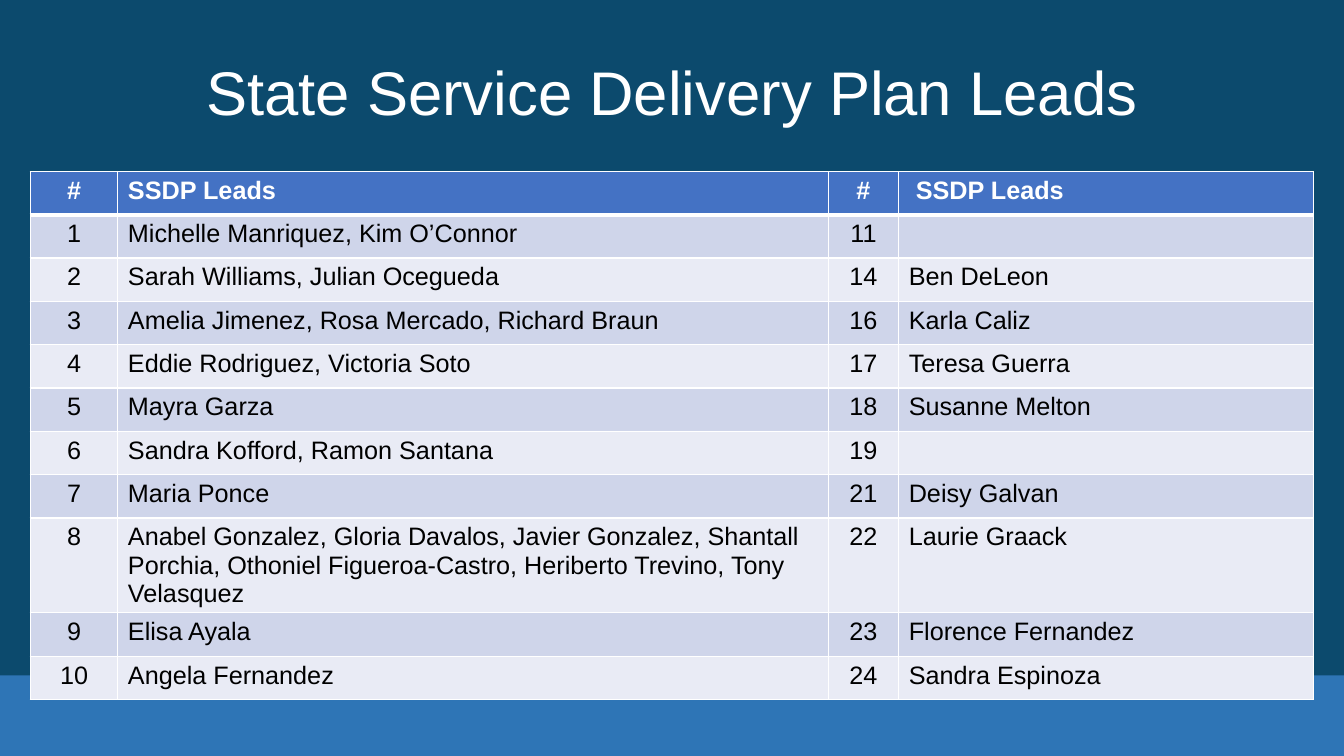
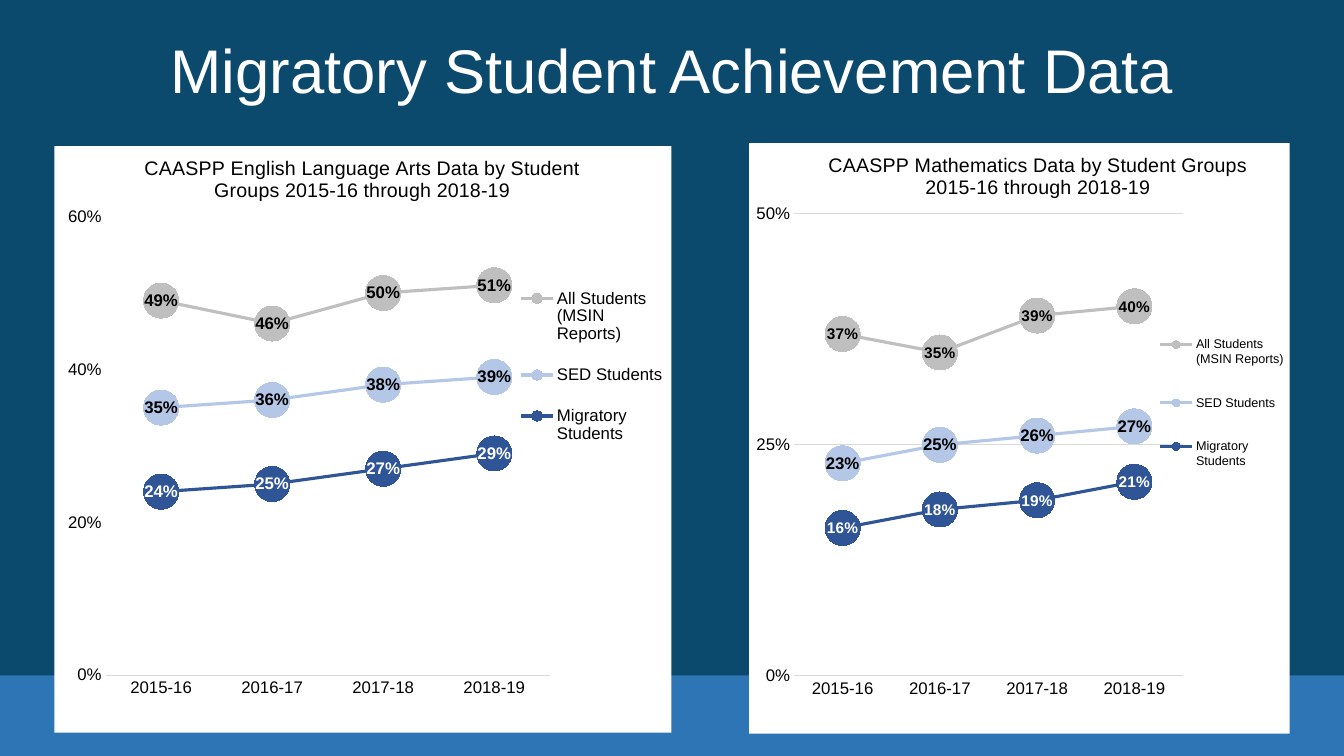
"""Build a table slide and a two-chart slide on student service plans."""
from dataclasses import dataclass
from itertools import zip_longest

from lxml import etree
from pptx import Presentation
from pptx import util as u
from pptx.chart.chart import Chart
from pptx.chart.data import CategoryChartData
from pptx.dml.color import RGBColor
from pptx.enum import chart as charts, shapes, text
from pptx.oxml import parse_xml
from pptx.oxml.ns import nsdecls, qn

FONT = "Arial"
WIDTH, HEIGHT = u.Inches(13.33), u.Inches(7.5)
COLORS = {
    "background": "0C4A6D",
    "band": "2E75B6",
    "header": "4472C4",
    "odd_row": "CFD5EA",
    "even_row": "E9EBF5",
    "white": "FFFFFF",
    "black": "000000",
    "rule": "D9D9D9",
    "all_students": "BFBFBF",
    "sed": "B4C7E7",
    "migratory": "2F5597",
}


@dataclass(frozen=True)
class Box:
    """Left, top, width and height in percent of the containing area."""
    left: float
    top: float
    width: float
    height: float

    def on_slide(self) -> tuple[int, int, int, int]:
        """Return the box in slide units."""
        return (int(WIDTH * self.left / 100), int(HEIGHT * self.top / 100),
                int(WIDTH * self.width / 100), int(HEIGHT * self.height / 100))


@dataclass(frozen=True)
class Series:
    """One student group with its values and label style."""
    name: str
    values: tuple[float, ...]
    color: str
    label_size: int = 12
    label_color: str = "black"


@dataclass(frozen=True)
class LineChart:
    """One achievement chart."""
    title: str
    box: Box
    legend_box: Box
    legend_size: int
    maximum: float
    step: float
    gridlines: bool
    series: tuple[Series, ...]


BAND = Box(0, 89.33, 100, 10.67)
TABLE = Box(2.25, 22.67, 95.5, 70.93)
PLOT = Box(8.3, 12, 72, 78.2)
CHART_TITLE = Box(14, 1, 0, 0)
COLUMN_SHARES = (6.83, 55.34, 5.5, 32.33)
ROW_HEIGHT = u.Inches(0.43)
YEARS = ("2015-16", "2016-17", "2017-18", "2018-19")
HEADER = ("#", "SSDP Leads", "#", " SSDP Leads")
LEFT_LEADS = (
    ("1", "Michelle Manriquez, Kim O’Connor"),
    ("2", "Sarah Williams, Julian Ocegueda"),
    ("3", "Amelia Jimenez, Rosa Mercado, Richard Braun"),
    ("4", "Eddie Rodriguez, Victoria Soto"),
    ("5", "Mayra Garza"),
    ("6", "Sandra Kofford, Ramon Santana"),
    ("7", "Maria Ponce"),
    ("8", "Anabel Gonzalez, Gloria Davalos, Javier Gonzalez, Shantall Porchia, "
          "Othoniel Figueroa-Castro, Heriberto Trevino, Tony Velasquez"),
    ("9", "Elisa Ayala"),
    ("10", "Angela Fernandez"),
)
RIGHT_LEADS = (
    ("11", ""), ("14", "Ben DeLeon"), ("16", "Karla Caliz"),
    ("17", "Teresa Guerra"), ("18", "Susanne Melton"), ("19", ""),
    ("21", "Deisy Galvan"), ("22", "Laurie Graack"),
    ("23", "Florence Fernandez"), ("24", "Sandra Espinoza"),
)
CHARTS = (
    LineChart(
        "CAASPP English Language Arts Data by Student Groups 2015-16 through 2018-19",
        Box(4.05, 19.33, 45.91, 77.6), Box(75.5, 20.5, 24, 34), 12, 0.6, 0.2, False,
        (Series("All Students (MSIN Reports)", (0.49, 0.46, 0.5, 0.51), "all_students"),
         Series("SED Students", (0.35, 0.36, 0.38, 0.39), "sed"),
         Series("Migratory Students", (0.24, 0.25, 0.27, 0.29), "migratory", 12, "white"))),
    LineChart(
        "CAASPP Mathematics Data by Student Groups 2015-16 through 2018-19",
        Box(55.74, 18.93, 40.21, 78.13), Box(75.5, 28, 24, 32), 9, 0.5, 0.25, True,
        (Series("All Students (MSIN Reports)", (0.37, 0.35, 0.39, 0.4), "all_students", 11),
         Series("SED Students", (0.23, 0.25, 0.26, 0.27), "sed"),
         Series("Migratory Students", (0.16, 0.18, 0.19, 0.21), "migratory", 11, "white"))),
)


def rgb(name: str) -> RGBColor:
    """Look up a palette colour."""
    return RGBColor.from_string(COLORS[name])


def paint(fill, color: str) -> None:
    """Give a fill one solid colour."""
    fill.solid()
    fill.fore_color.rgb = rgb(color)


def set_font(font, size: int, color: str = "black", bold: bool = False) -> None:
    """Apply the shared typeface with the given style."""
    font.name, font.size, font.bold = FONT, u.Pt(size), bold
    font.color.rgb = rgb(color)


def add_slide(presentation, title: str, top: float):
    """Add a slide with the shared title style."""
    slide = presentation.slides.add_slide(presentation.slide_layouts[5])
    shape = slide.shapes.title
    shape.left, shape.top, shape.width, shape.height = Box(1.28, top, 97.52, 19.33).on_slide()
    shape.text_frame.text = title
    shape.text_frame.vertical_anchor = text.MSO_ANCHOR.MIDDLE
    paragraph = shape.text_frame.paragraphs[0]
    paragraph.alignment = text.PP_ALIGN.CENTER
    paragraph.line_spacing = 0.9
    set_font(paragraph.font, 44, "white")
    return slide


def style_master(presentation, slide) -> None:
    """Set the background and move a bottom band into the master."""
    master = presentation.slide_master
    paint(master.background.fill, "background")
    band = slide.shapes.add_shape(shapes.MSO_SHAPE.RECTANGLE, *BAND.on_slide())
    band.shadow.inherit = False
    paint(band.fill, "band")
    band.line.fill.background()
    band.element.nvSpPr.cNvPr.set("id", "50")
    master.shapes.element.insert(2, band.element)


def add_borders(cell, bottom: float) -> None:
    """Draw white cell borders with the given bottom weight."""
    properties = cell._tc.get_or_add_tcPr()
    for index, (side, weight) in enumerate((("L", 1), ("R", 1), ("T", 1), ("B", bottom))):
        properties.insert(index, parse_xml(
            f'<a:ln{side} {nsdecls("a")} w="{u.Pt(weight)}"><a:solidFill>'
            f'<a:srgbClr val="{COLORS["white"]}"/></a:solidFill></a:ln{side}>'))


def add_leads_table(slide) -> None:
    """Add the table of leads."""
    rows = [HEADER] + [left + right for left, right in
                       zip_longest(LEFT_LEADS, RIGHT_LEADS, fillvalue=("", ""))]
    frame = slide.shapes.add_table(len(rows), len(HEADER), *TABLE.on_slide())
    table = frame.table
    total = frame.width
    for column, share in zip(table.columns, COLUMN_SHARES):
        column.width = int(total * share / 100)
    for row_index, values in enumerate(rows):
        table.rows[row_index].height = ROW_HEIGHT
        is_header = row_index == 0
        fill = "header" if is_header else ("even_row", "odd_row")[row_index % 2]
        for column_index, value in enumerate(values):
            cell = table.cell(row_index, column_index)
            cell.text = value
            paint(cell.fill, fill)
            add_borders(cell, 3 if is_header else 1)
            paragraph = cell.text_frame.paragraphs[0]
            if column_index % 2 == 0:
                paragraph.alignment = text.PP_ALIGN.CENTER
            set_font(paragraph.font, 18, "white" if is_header else "black", is_header)
    frame.height = TABLE.on_slide()[3]


def place(part, box: Box, inner: bool = False) -> None:
    """Give a chart part a fixed place inside its chart."""
    for old in part.findall(qn("c:layout")):
        part.remove(old)
    layout = etree.Element(qn("c:layout"))
    manual = etree.SubElement(layout, qn("c:manualLayout"))
    settings = [("layoutTarget", "inner")] if inner else []
    settings += [("xMode", "edge"), ("yMode", "edge"),
                 ("x", box.left / 100), ("y", box.top / 100)]
    if box.width:
        settings += [("w", box.width / 100), ("h", box.height / 100)]
    for name, value in settings:
        etree.SubElement(manual, qn(f"c:{name}")).set("val", str(value))
    overlay = part.find(qn("c:overlay"))
    part.insert(0 if overlay is None else part.index(overlay), layout)


def style_axes(chart: Chart, design: LineChart) -> None:
    """Set the scale, labels and rules of both axes."""
    values, categories = chart.value_axis, chart.category_axis
    values.minimum_scale, values.maximum_scale = 0, design.maximum
    values.major_unit = design.step
    values.has_major_gridlines = design.gridlines
    values.tick_labels.number_format = "0%"
    values.tick_labels.number_format_is_linked = False
    values.format.line.fill.background()
    lines = [categories.format.line]
    if design.gridlines:
        lines.append(values.major_gridlines.format.line)
    for line in lines:
        line.color.rgb, line.width = rgb("rule"), u.Pt(0.75)
    for axis in (values, categories):
        axis.major_tick_mark = axis.minor_tick_mark = charts.XL_TICK_MARK.NONE
        set_font(axis.tick_labels.font, 12)


def style_series(line_series, design: Series) -> None:
    """Style one line, its round markers and its labels."""
    line_series.smooth = False
    line_series.format.line.color.rgb = rgb(design.color)
    line_series.format.line.width = u.Pt(2.25)
    marker = line_series.marker
    marker.style, marker.size = charts.XL_MARKER_STYLE.CIRCLE, 25
    paint(marker.format.fill, design.color)
    marker.format.line.fill.background()
    labels = line_series.data_labels
    labels.show_value = True
    labels.position = charts.XL_LABEL_POSITION.CENTER
    labels.number_format, labels.number_format_is_linked = "0%", False
    set_font(labels.font, design.label_size, design.label_color, True)


def add_line_chart(slide, design: LineChart) -> None:
    """Add one line chart on a white ground."""
    data = CategoryChartData(number_format="0%")
    data.categories = YEARS
    for group in design.series:
        data.add_series(group.name, group.values)
    chart = slide.shapes.add_chart(
        charts.XL_CHART_TYPE.LINE_MARKERS, *design.box.on_slide(), data).chart
    set_font(chart.font, 10)
    chart.plots[0].vary_by_categories = False
    chart.has_title = True
    chart.chart_title.text_frame.text = design.title
    set_font(chart.chart_title.text_frame.paragraphs[0].font, 14)
    chart.has_legend = True
    chart.legend.position = charts.XL_LEGEND_POSITION.RIGHT
    chart.legend.include_in_layout = False
    set_font(chart.legend.font, design.legend_size)
    style_axes(chart, design)
    for line_series, group in zip(chart.plots[0].series, design.series):
        style_series(line_series, group)
    body = chart.element.find(qn("c:chart"))
    place(body.find(qn("c:title")), CHART_TITLE)
    place(body.find(qn("c:plotArea")), PLOT, inner=True)
    place(body.find(qn("c:legend")), design.legend_box)
    body.addnext(parse_xml(
        f'<c:spPr {nsdecls("c", "a")}><a:solidFill><a:srgbClr val="{COLORS["white"]}"/>'
        '</a:solidFill><a:ln><a:noFill/></a:ln></c:spPr>'))


def main() -> None:
    """Build and save the presentation."""
    presentation = Presentation()
    presentation.slide_width, presentation.slide_height = WIDTH, HEIGHT
    leads = add_slide(presentation, "State Service Delivery Plan Leads", 2.93)
    style_master(presentation, leads)
    add_leads_table(leads)
    achievement = add_slide(presentation, "Migratory Student Achievement Data", 0)
    for design in CHARTS:
        add_line_chart(achievement, design)
    presentation.save("out.pptx")


if __name__ == "__main__":
    main()
